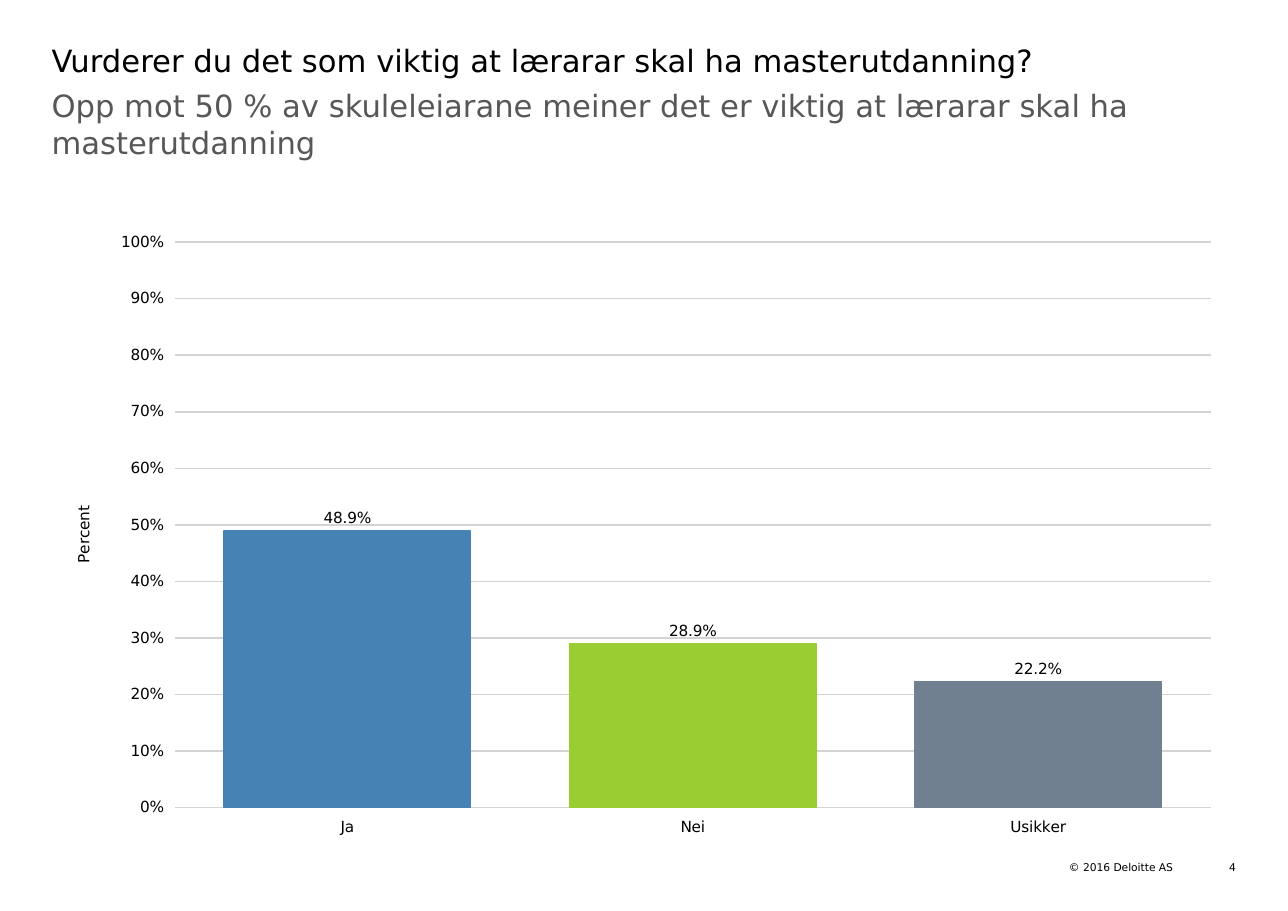
from dataclasses import dataclass

from lxml import etree
from pptx import Presentation
from pptx.chart.data import CategoryChartData
from pptx.dml.color import RGBColor
from pptx.enum.chart import XL_CHART_TYPE, XL_LABEL_POSITION, XL_TICK_MARK
from pptx.enum.text import MSO_ANCHOR, MSO_AUTO_SIZE, PP_ALIGN
from pptx.oxml.ns import qn
from pptx.util import Cm, Pt

COLUMN_CLUSTERED = XL_CHART_TYPE.COLUMN_CLUSTERED
OUTSIDE_END = XL_LABEL_POSITION.OUTSIDE_END
CROSS = XL_TICK_MARK.CROSS
TOP = MSO_ANCHOR.TOP
MIDDLE = MSO_ANCHOR.MIDDLE
NO_AUTOFIT = MSO_AUTO_SIZE.NONE
LEFT = PP_ALIGN.LEFT
RIGHT = PP_ALIGN.RIGHT

TITLE = "Vurderer du det som viktig at lærarar skal ha masterutdanning?"
SUBTITLE = "Opp mot 50 % av skuleleiarane meiner det er viktig at lærarar skal ha masterutdanning"
COPYRIGHT = "© 2016 Deloitte AS"
PAGE_NUMBER = "4"
AXIS_TITLE = "Percent"
SERIES_NAME = "Series 1"
ANSWERS = [
    ("Ja", 0.489, "4682B4"),
    ("Nei", 0.289, "9ACD32"),
    ("Usikker", 0.222, "708090"),
]
PLOT_LAYOUT = {"x": 0.104, "y": 0.033, "w": 0.876, "h": 0.903}


@dataclass(frozen=True)
class Theme:
    font: str = "DejaVu Sans"
    text: str = "000000"
    subtitle: str = "575757"
    grid: str = "D3D3D3"
    heading_size: int = 20
    chart_size: int = 10
    footer_size: int = 7


THEME = Theme()
SLIDE_WIDTH = 29.7
SLIDE_HEIGHT = 21
MARGIN = 1.19
CONTENT_WIDTH = 27.28
FOOTER_TOP = 19.84
FOOTER_HEIGHT = 0.3


def format_font(font, size, color=THEME.text):
    font.name = THEME.font
    font.size = Pt(size)
    font.bold = False
    font.color.rgb = RGBColor.from_string(color)


def place(shape, left, top, width, height):
    shape.left, shape.top = Cm(left), Cm(top)
    shape.width, shape.height = Cm(width), Cm(height)


def write(shape, text, size, color=THEME.text, alignment=LEFT, anchor=TOP, wrap=True):
    frame = shape.text_frame
    frame.text = text
    frame.margin_left = frame.margin_right = frame.margin_top = frame.margin_bottom = 0
    frame.auto_size = NO_AUTOFIT
    frame.word_wrap = wrap
    frame.vertical_anchor = anchor
    paragraph = frame.paragraphs[0]
    paragraph.alignment = alignment
    paragraph.line_spacing = 1.0
    format_font(paragraph.runs[0].font, size, color)


def add_text(slide, box, text, size, **options):
    shape = slide.shapes.add_textbox(0, 0, 0, 0)
    place(shape, *box)
    write(shape, text, size, **options)


def set_plot_layout(chart):
    plot_area = chart._chartSpace.chart.plotArea
    for layout in plot_area.findall(qn("c:layout")):
        plot_area.remove(layout)
    layout = etree.Element(qn("c:layout"))
    manual = etree.SubElement(layout, qn("c:manualLayout"))
    settings = {"layoutTarget": "inner", "xMode": "edge", "yMode": "edge", **PLOT_LAYOUT}
    for name, value in settings.items():
        etree.SubElement(manual, qn(f"c:{name}")).set("val", str(value))
    plot_area.insert(0, layout)


def format_axes(chart):
    for axis in (chart.category_axis, chart.value_axis):
        axis.major_tick_mark = CROSS
        axis.format.line.fill.background()
        format_font(axis.tick_labels.font, THEME.chart_size)
    chart.category_axis.has_major_gridlines = False
    value_axis = chart.value_axis
    value_axis.minimum_scale, value_axis.maximum_scale = 0, 1
    value_axis.major_unit = 0.1
    value_axis.tick_labels.number_format = "0%"
    value_axis.tick_labels.number_format_is_linked = False
    value_axis.has_major_gridlines = True
    grid_line = value_axis.major_gridlines.format.line
    grid_line.color.rgb = RGBColor.from_string(THEME.grid)
    grid_line.width = Pt(1)
    title_frame = value_axis.axis_title.text_frame
    title_frame.text = AXIS_TITLE
    format_font(title_frame.paragraphs[0].runs[0].font, THEME.chart_size)


def format_columns(chart):
    plot = chart.plots[0]
    plot.gap_width = 40
    plot.vary_by_categories = False
    series = plot.series[0]
    for index, (_, _, color) in enumerate(ANSWERS):
        column = series.points[index].format
        column.fill.solid()
        column.fill.fore_color.rgb = RGBColor.from_string(color)
        column.line.color.rgb = RGBColor.from_string(color)
        column.line.width = Pt(0.75)
    labels = series.data_labels
    labels.show_value = True
    labels.number_format = "0.0%"
    labels.number_format_is_linked = False
    labels.position = OUTSIDE_END
    format_font(labels.font, THEME.chart_size)


def add_answer_chart(slide):
    data = CategoryChartData(number_format="0.0%")
    data.categories = [answer for answer, _, _ in ANSWERS]
    data.add_series(SERIES_NAME, [share for _, share, _ in ANSWERS])
    box = (MARGIN, 5.11, CONTENT_WIDTH, 14.43)
    frame = slide.shapes.add_chart(COLUMN_CLUSTERED, *map(Cm, box), data)
    chart = frame.chart
    chart.has_legend = False
    chart.has_title = False
    format_font(chart.font, THEME.chart_size)
    format_axes(chart)
    format_columns(chart)
    set_plot_layout(chart)


def main():
    presentation = Presentation()
    presentation.slide_width = Cm(SLIDE_WIDTH)
    presentation.slide_height = Cm(SLIDE_HEIGHT)
    slide = presentation.slides.add_slide(presentation.slide_layouts[5])

    title = slide.shapes.title
    place(title, MARGIN, 0.97, CONTENT_WIDTH, 1.02)
    write(title, TITLE, THEME.heading_size)
    add_text(slide, (MARGIN, 2.01, CONTENT_WIDTH, 2.31), SUBTITLE,
             THEME.heading_size, color=THEME.subtitle)
    add_answer_chart(slide)
    add_text(slide, (24.59, FOOTER_TOP, 2.46, FOOTER_HEIGHT), COPYRIGHT,
             THEME.footer_size, alignment=RIGHT, anchor=MIDDLE, wrap=False)
    add_text(slide, (27.74, FOOTER_TOP, 0.76, FOOTER_HEIGHT), PAGE_NUMBER,
             THEME.footer_size, alignment=RIGHT)
    presentation.save("out.pptx")


if __name__ == "__main__":
    main()
